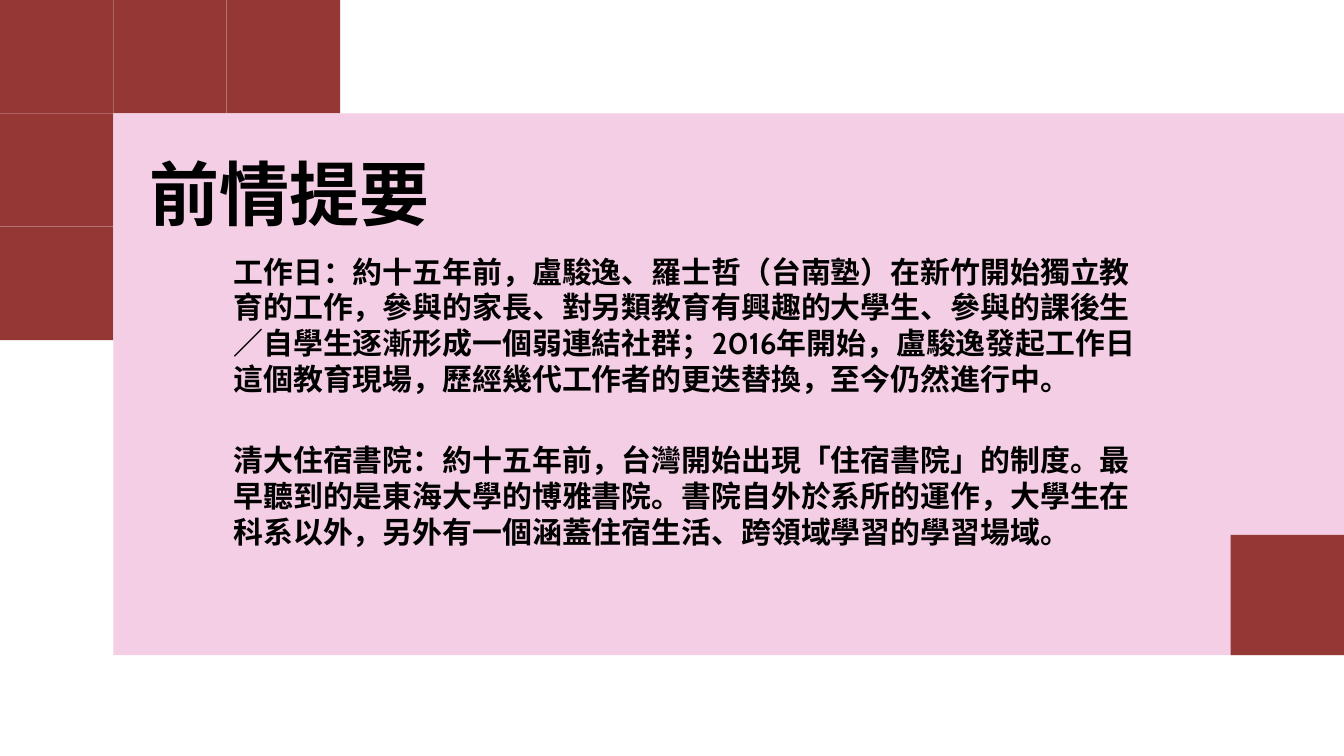
"""Build the recap slide: a pink panel framed by dark red blocks, with a title and two paragraphs."""
from pptx import Presentation
from pptx.dml.color import RGBColor
from pptx.enum.shapes import MSO_SHAPE
from pptx.enum.text import MSO_ANCHOR, MSO_AUTO_SIZE, PP_ALIGN
from pptx.util import Pt

RECTANGLE = MSO_SHAPE.RECTANGLE
TOP = MSO_ANCHOR.TOP
NO_FIT = MSO_AUTO_SIZE.NONE
LEFT = PP_ALIGN.LEFT

PX = 9525
WIDTH, HEIGHT = 1920, 1080
UNIT = 162
RED, PINK, BLACK = "953735", "F4CEE4", "000000"


def color(value):
    return RGBColor.from_string(value)


def write(box, text, size):
    frame = box.text_frame
    for name, value in {"word_wrap": True, "auto_size": NO_FIT, "vertical_anchor": TOP}.items():
        setattr(frame, name, value)
    para = frame.paragraphs[0]
    para.alignment = LEFT
    span = para.add_run()
    span.text = text
    for name, value in {"name": "Cabin", "size": Pt(size), "bold": True}.items():
        setattr(span.font, name, value)
    span.font.color.rgb = color(BLACK)
    return frame


deck = Presentation()
deck.slide_width, deck.slide_height = WIDTH * PX, HEIGHT * PX
page = deck.slides.add_slide(deck.slide_layouts[5])

corner_cells = [(0, 0), (0, 1), (0, 2), (1, 0), (2, 0)]
blocks = [(column * UNIT, row * UNIT, UNIT, UNIT, RED) for column, row in corner_cells]
blocks.append((UNIT, UNIT, WIDTH - UNIT, 774, PINK))
blocks.append((WIDTH - UNIT, 764, UNIT, 172, RED))

for left, top, width, height, fill in blocks:
    block = page.shapes.add_shape(RECTANGLE, left * PX, top * PX, width * PX, height * PX)
    block.shadow.inherit = False
    block.fill.solid()
    block.fill.fore_color.rgb = color(fill)
    block.line.fill.background()

stories = [
    (357, 217, "工作日：約十五年前，盧駿逸、羅士哲（台南塾）在新竹開始獨立教育的工作，參與的家長、對另類教育有興趣的大學生、參與的課後生／自學生逐漸形成一個弱連結社群；2016年開始，盧駿逸發起工作日這個教育現場，歷經幾代工作者的更迭替換，至今仍然進行中。"),
    (626, 165, "清大住宿書院：約十五年前，台灣開始出現「住宿書院」的制度。最早聽到的是東海大學的博雅書院。書院自外於系所的運作，大學生在科系以外，另外有一個涵蓋住宿生活、跨領域學習的學習場域。"),
]
for top, height, text in stories:
    box = page.shapes.add_textbox(324 * PX, top * PX, 1320 * PX, height * PX)
    write(box, text, 32)

title = page.shapes.title
for name, value in {"left": 213, "top": 195, "width": 1542, "height": 121}.items():
    setattr(title, name, value * PX)
frame = write(title, "前情提要", 75)
for side in ("left", "top", "right", "bottom"):
    setattr(frame, f"margin_{side}", 0)
frame.paragraphs[0].line_spacing = Pt(105)
title.element.getparent().append(title.element)

deck.save("out.pptx")
